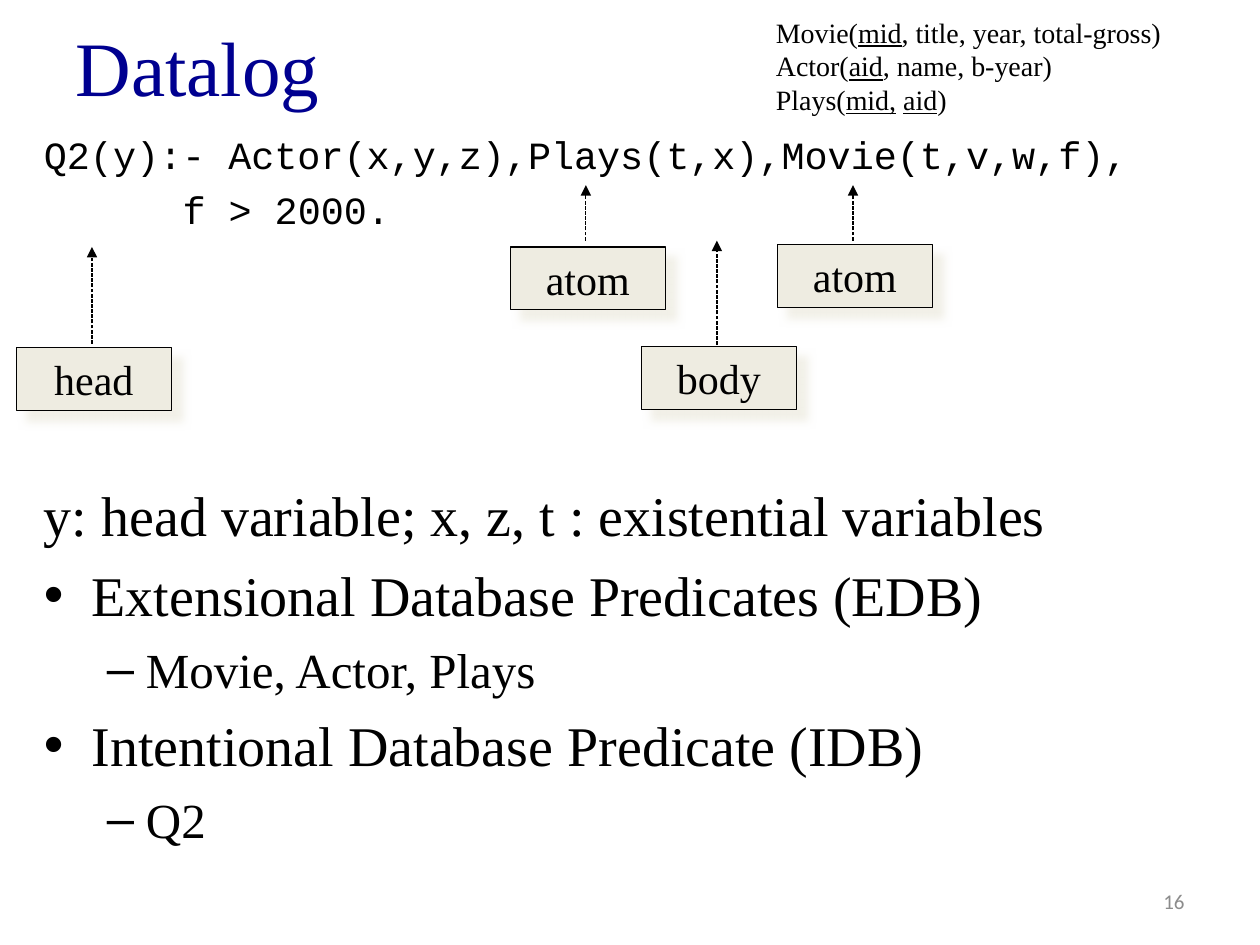
from typing import NamedTuple

from lxml import etree
from pptx import Presentation
from pptx import util as u
from pptx.dml.color import RGBColor
from pptx.enum import dml, shapes, text
from pptx.oxml.ns import qn

NAVY = RGBColor(0x00, 0x00, 0x90)
BLACK = RGBColor(0x00, 0x00, 0x00)
GRAY = RGBColor(0x8C, 0x8C, 0x8C)
CREAM = RGBColor(0xEE, 0xEC, 0xE1)
SERIF, MONO, SANS = "Times New Roman", "Courier New", "Calibri"
LABEL_WIDTH, LABEL_HEIGHT, ARROW_OFFSET = 1.23, 0.5, 0.6


class Line(NamedTuple):
    """One paragraph of the body; lengths in inches, sizes in points."""
    words: str
    size: float
    before: float
    font: str = SERIF
    margin: float = 0
    hanging: float = 0
    bullet: str = ""


class Label(NamedTuple):
    """A named box with an arrow rising from arrow_start to arrow_tip."""
    name: str
    left: float
    top: float
    arrow_start: float
    arrow_tip: float


def query(words: str, margin: float = 0) -> Line:
    return Line(words, 22, 5, MONO, margin)


def topic(words: str) -> Line:
    return Line(words, 32, 7.4, SERIF, 0.38, 0.38, "•")


def detail(words: str) -> Line:
    return Line(words, 28, 6.4, SERIF, 0.81, 0.31, "–")


BODY = [
    query("Q2(y):- Actor(x,y,z),Plays(t,x),Movie(t,v,w,f),"),
    query("f > 2000.", margin=1.1),
    Line("y: head variable; x, z, t : existential variables", 32, 142),
    topic("Extensional Database Predicates (EDB)"),
    detail("Movie, Actor, Plays"),
    topic("Intentional Database Predicate (IDB)"),
    detail("Q2"),
]
LABELS = [
    Label("head", 0.13, 2.76, 2.73, 1.96),
    Label("atom", 4.05, 1.96, 1.91, 1.47),
    Label("atom", 6.17, 1.94, 1.91, 1.47),
    Label("body", 5.09, 2.75, 2.74, 1.91),
]
# Each schema line is a list of (words, is key)
SCHEMA = [
    [("Movie(", False), ("mid", True), (", title, year, total-gross)", False)],
    [("Actor(", False), ("aid", True), (", name, b-year)", False)],
    [("Plays(", False), ("mid,", True), (" ", False), ("aid", True), (")", False)],
]


def style(para, font: str, size: float, color: RGBColor) -> None:
    para.font.name, para.font.size = font, u.Pt(size)
    para.font.color.rgb = color


def add_box(page, left: float, top: float, width: float, height: float):
    box = page.shapes.add_textbox(*map(u.Inches, (left, top, width, height)))
    box.text_frame.word_wrap = True
    return box.text_frame


def next_para(frame, index: int):
    return frame.add_paragraph() if index else frame.paragraphs[0]


def add_body(page, lines: list[Line]) -> None:
    frame = add_box(page, 0.25, 0.99, 9.75, 6.36)
    for index, line in enumerate(lines):
        para = next_para(frame, index)
        para.text = line.words
        para.space_before = u.Pt(line.before)
        style(para, line.font, line.size, BLACK)
        props = para._p.get_or_add_pPr()
        props.set("marL", str(u.Inches(line.margin)))
        props.set("indent", str(-u.Inches(line.hanging)))
        if line.bullet:
            para.level = 1 if line.bullet == "–" else 0
            font = etree.Element(qn("a:buFont"), typeface="Arial")
            mark = etree.Element(qn("a:buChar"), char=line.bullet)
            props.find(qn("a:spcBef")).addnext(font)
            font.addnext(mark)


def add_schema(page) -> None:
    frame = add_box(page, 6.06, 0.07, 3.55, 1.21)
    for index, parts in enumerate(SCHEMA):
        para = next_para(frame, index)
        style(para, SERIF, 16, BLACK)
        for words, is_key in parts:
            span = para.add_run()
            span.text = words
            if is_key:
                span.font.underline = True


def add_shadow(box) -> None:
    box.shadow.inherit = False
    effects = box._element.spPr.find(qn("a:effectLst"))
    shadow = etree.SubElement(
        effects, qn("a:outerShdw"), blurRad=str(u.Pt(5)), dist=str(u.Pt(8.5)),
        dir="2700000", algn="tl", rotWithShape="0")
    color = etree.SubElement(shadow, qn("a:srgbClr"), val=str(CREAM))
    etree.SubElement(color, qn("a:alpha"), val="75000")


def add_label(page, label: Label) -> None:
    box = page.shapes.add_shape(
        shapes.MSO_SHAPE.RECTANGLE, u.Inches(label.left), u.Inches(label.top),
        u.Inches(LABEL_WIDTH), u.Inches(LABEL_HEIGHT))
    box.fill.solid()
    box.fill.fore_color.rgb = CREAM
    box.line.color.rgb = BLACK
    box.line.width = u.Pt(0.75)
    add_shadow(box)
    frame = box.text_frame
    frame.vertical_anchor = text.MSO_ANCHOR.TOP
    para = frame.paragraphs[0]
    para.text = label.name
    para.alignment = text.PP_ALIGN.CENTER
    style(para, SERIF, 24, BLACK)


def add_arrow(page, x: float, start: float, tip: float) -> None:
    arrow = page.shapes.add_connector(
        shapes.MSO_CONNECTOR.STRAIGHT, u.Inches(x), u.Inches(start),
        u.Inches(x), u.Inches(tip))
    arrow.line.color.rgb = BLACK
    arrow.line.width = u.Pt(0.75)
    arrow.line.dash_style = dml.MSO_LINE.SQUARE_DOT
    props = arrow._element.spPr
    etree.SubElement(props.find(qn("a:ln")), qn("a:tailEnd"), type="triangle")
    etree.SubElement(props, qn("a:effectLst"))


def add_title(page, words: str) -> None:
    title = page.shapes.title
    title.left, title.top = u.Inches(0.5), u.Inches(0.05)
    title.width, title.height = u.Inches(9.3), u.Inches(0.94)
    title.text_frame.vertical_anchor = text.MSO_ANCHOR.MIDDLE
    para = title.text_frame.paragraphs[0]
    para.text = words
    para.alignment = text.PP_ALIGN.LEFT
    style(para, SERIF, 44, NAVY)


def add_page_number(page, number: int) -> None:
    frame = add_box(page, 7.17, 6.95, 2.33, 0.4)
    frame.vertical_anchor = text.MSO_ANCHOR.MIDDLE
    para = frame.paragraphs[0]
    para.text = str(number)
    para.alignment = text.PP_ALIGN.RIGHT
    style(para, SANS, 12, GRAY)


def main() -> None:
    deck = Presentation()
    deck.slide_width, deck.slide_height = u.Inches(10), u.Inches(7.5)
    page = deck.slides.add_slide(deck.slide_layouts.get_by_name("Title Only"))

    # Title, rule and explanations
    add_title(page, "Datalog")
    add_body(page, BODY)
    add_page_number(page, 16)

    # Labels pointing at the parts of the rule
    for label in LABELS:
        add_label(page, label)
        add_arrow(page, label.left + ARROW_OFFSET, label.arrow_start, label.arrow_tip)

    # Database schema
    add_schema(page)
    deck.save("out.pptx")


if __name__ == "__main__":
    main()
